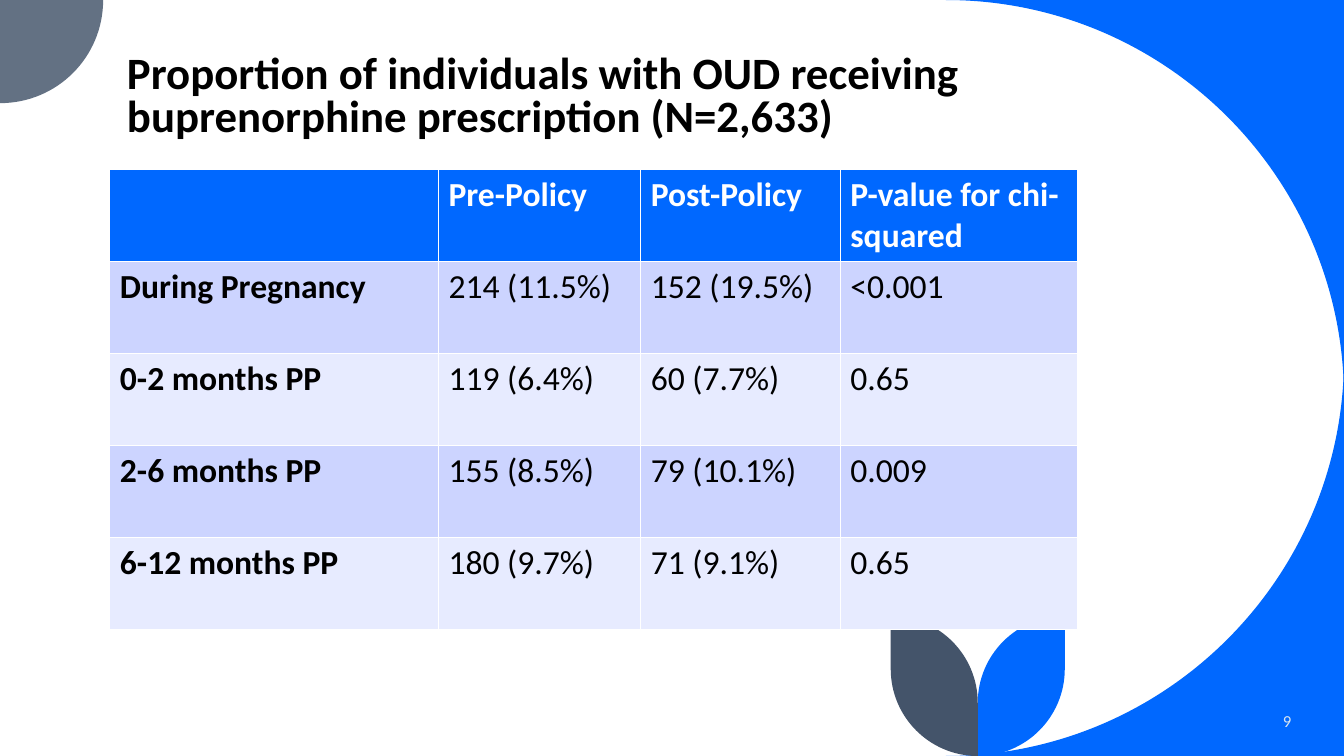
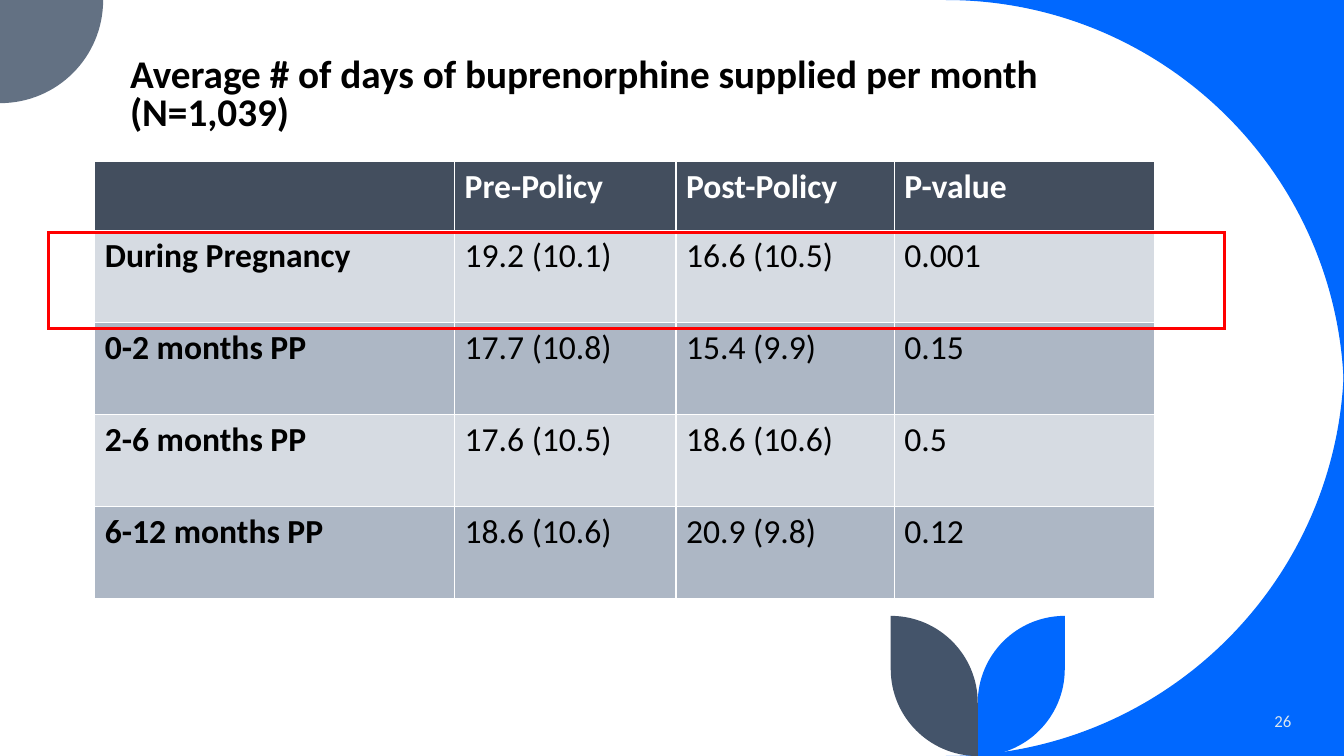
from lxml import etree
from pptx import Presentation
from pptx import util as u
from pptx.dml.color import RGBColor
from pptx.enum import shapes, text
from pptx.oxml.ns import qn

W, H = 4000, 2250
PX = 3048
FONT = "Calibri"
COLORS = {
    "blue": "0068FF", "slate": "44546A", "grey": "637183", "header": "434E5E",
    "lilac": "CCD4FF", "pale": "E7EBFF", "silver": "D6DBE2", "steel": "ADB7C5",
    "white": "FFFFFF", "black": "000000", "number": "DAE5EF", "red": "FF0000",
}
PERIODS = ["During Pregnancy", "0-2 months PP", "2-6 months PP", "6-12 months PP"]
ROW_HEIGHT = 274
ROUND = 0.5523  # Bezier handle length of a quarter circle, as a share of its radius

SLIDES = [
    {
        "title": "Proportion of individuals with OUD receiving buprenorphine prescription (N=2,633)",
        "title_box": (348, 45, 3399, 390), "title_size": 32,
        "table_at": (327, 504), "cols": [978, 602, 594, 707], "header_height": 274,
        "fills": ("blue", "lilac", "pale"),
        "head": ["Pre-Policy", "Post-Policy", "P-value for chi-squared"],
        "values": [
            ["214 (11.5%)", "152 (19.5%)", "<0.001"],
            ["119 (6.4%)", "60 (7.7%)", "0.65"],
            ["155 (8.5%)", "79 (10.1%)", "0.009"],
            ["180 (9.7%)", "71 (9.1%)", "0.65"],
        ],
        "number": "9", "highlight": None,
    },
    {
        "title": "Average # of days of buprenorphine supplied per month (N=1,039)",
        "title_box": (357, 24, 3039, 390), "title_size": 28,
        "table_at": (282, 480), "cols": [1071, 659, 650, 774], "header_height": 207,
        "fills": ("header", "silver", "steel"),
        "head": ["Pre-Policy", "Post-Policy", "P-value"],
        "values": [
            ["19.2 (10.1)", "16.6 (10.5)", "0.001"],
            ["17.7 (10.8)", "15.4 (9.9)", "0.15"],
            ["17.6 (10.5)", "18.6 (10.6)", "0.5"],
            ["18.6 (10.6)", "20.9 (9.8)", "0.12"],
        ],
        "number": "26", "highlight": (144, 693, 3501, 285),
    },
]


def style(p, size, color, bold=False):
    for r in p.runs:
        r.font.name, r.font.size, r.font.bold = FONT, u.Pt(size), bold
        r.font.color.rgb = RGBColor.from_string(COLORS[color])


def add_outline(s, color, segments):
    """Closed shape; a segment is (end,) for a line or (corner, end) for a quarter circle."""
    ends = [segment[-1] for segment in segments]
    left, top = min(x for x, _ in ends), min(y for _, y in ends)
    builder = s.shapes.build_freeform(*ends[-1], scale=PX)
    builder.add_line_segments(ends, close=True)
    sp = builder.convert_to_shape()
    sp.shadow.inherit = False
    sp.fill.solid()
    sp.fill.fore_color.rgb = RGBColor.from_string(COLORS[color])
    sp.line.fill.background()
    path_w = next(sp.element.iter(qn("a:path")))
    unit = int(path_w.get("w")) / (max(x for x, _ in ends) - left)
    lines = list(sp.element.iter(qn("a:lnTo")))
    for line, segment, start in zip(lines, segments, ends[-1:] + ends):
        if len(segment) == 2:
            corner, end = segment
            line.tag = qn("a:cubicBezTo")
            for i, point in enumerate((start, end)):
                x, y = [a + ROUND * (c - a) for a, c in zip(point, corner)]
                pt = etree.Element(qn("a:pt"), x=str(round((x - left) * unit)),
                                   y=str(round((y - top) * unit)))
                line.insert(i, pt)
    return sp


prs = Presentation()
prs.slide_width, prs.slide_height = W * PX, H * PX
layout = prs.slide_layouts[5]
slides = [prs.slides.add_slide(layout) for _ in SLIDES]

# Shared artwork: corners and leaves are drawn once and moved to the layout
big, small, leaf = 1185, 307, 259
stem, leaf_top = 2910, 1833
outlines = [
    ("blue", [((W - big, 0),), ((W, 0), (W, big)), ((W, 0),)]),
    ("blue", [((W, H - big),), ((W, H), (W - big, H)), ((W, H),)]),
    ("grey", [((small, 0),), ((small, small), (0, small)), ((0, 0),)]),
]
for color, tip in (("blue", stem + leaf), ("slate", stem - leaf)):
    outlines.append((color, [
        ((tip, H - leaf),), ((tip, H), (stem, H)),
        ((stem, leaf_top + leaf),), ((stem, leaf_top), (tip, leaf_top)),
    ]))
for i, (color, segments) in enumerate(outlines):
    sp = add_outline(slides[0], color, segments)
    sp.element.nvSpPr.cNvPr.set("id", str(100 + i))
    layout.shapes.element.append(sp.element)

for s, data in zip(slides, SLIDES):
    # Title
    title = s.shapes.title
    title.left, title.top, title.width, title.height = [v * PX for v in data["title_box"]]
    tf = title.text_frame
    tf.text = data["title"]
    tf.auto_size = text.MSO_AUTO_SIZE.NONE
    tf.word_wrap = True
    tf.vertical_anchor = text.MSO_ANCHOR.BOTTOM
    tf.margin_right = 120 * PX
    p = tf.paragraphs[0]
    p.alignment = text.PP_ALIGN.LEFT
    p.line_spacing = 0.8
    style(p, data["title_size"], "black", True)

    # Table
    rows = [[""] + data["head"]]
    rows += [[period] + values for period, values in zip(PERIODS, data["values"])]
    heights = [data["header_height"]] + [ROW_HEIGHT] * len(PERIODS)
    box = (*data["table_at"], sum(data["cols"]), sum(heights))
    table = s.shapes.add_table(len(rows), len(data["cols"]), *[v * PX for v in box]).table
    for column, width in zip(table.columns, data["cols"]):
        column.width = width * PX
    for row, height in zip(table.rows, heights):
        row.height = height * PX
    header_fill, odd_fill, even_fill = data["fills"]
    for i, row in enumerate(rows):
        fill = header_fill if i == 0 else odd_fill if i % 2 else even_fill
        for j, value in enumerate(row):
            cell = table.cell(i, j)
            cell.text = value
            style(cell.text_frame.paragraphs[0], 24,
                  "black" if i else "white", i == 0 or j == 0)
            cell.fill.solid()
            cell.fill.fore_color.rgb = RGBColor.from_string(COLORS[fill])

    # Slide number
    number = s.shapes.add_textbox(*[v * PX for v in (3330, 2085, 543, 120)])
    tf = number.text_frame
    tf.text = data["number"]
    tf.word_wrap = True
    tf.vertical_anchor = text.MSO_ANCHOR.MIDDLE
    p = tf.paragraphs[0]
    p.alignment = text.PP_ALIGN.RIGHT
    style(p, 12, "number")

    # Highlighted row
    if data["highlight"]:
        frame = s.shapes.add_shape(shapes.MSO_SHAPE.RECTANGLE,
                                   *[v * PX for v in data["highlight"]])
        frame.shadow.inherit = False
        frame.fill.background()
        frame.line.color.rgb = RGBColor.from_string(COLORS["red"])
        frame.line.width = u.Pt(2.25)
        etree.SubElement(frame.line._get_or_add_ln(), qn("a:miter"), lim="800000")

prs.save("out.pptx")
